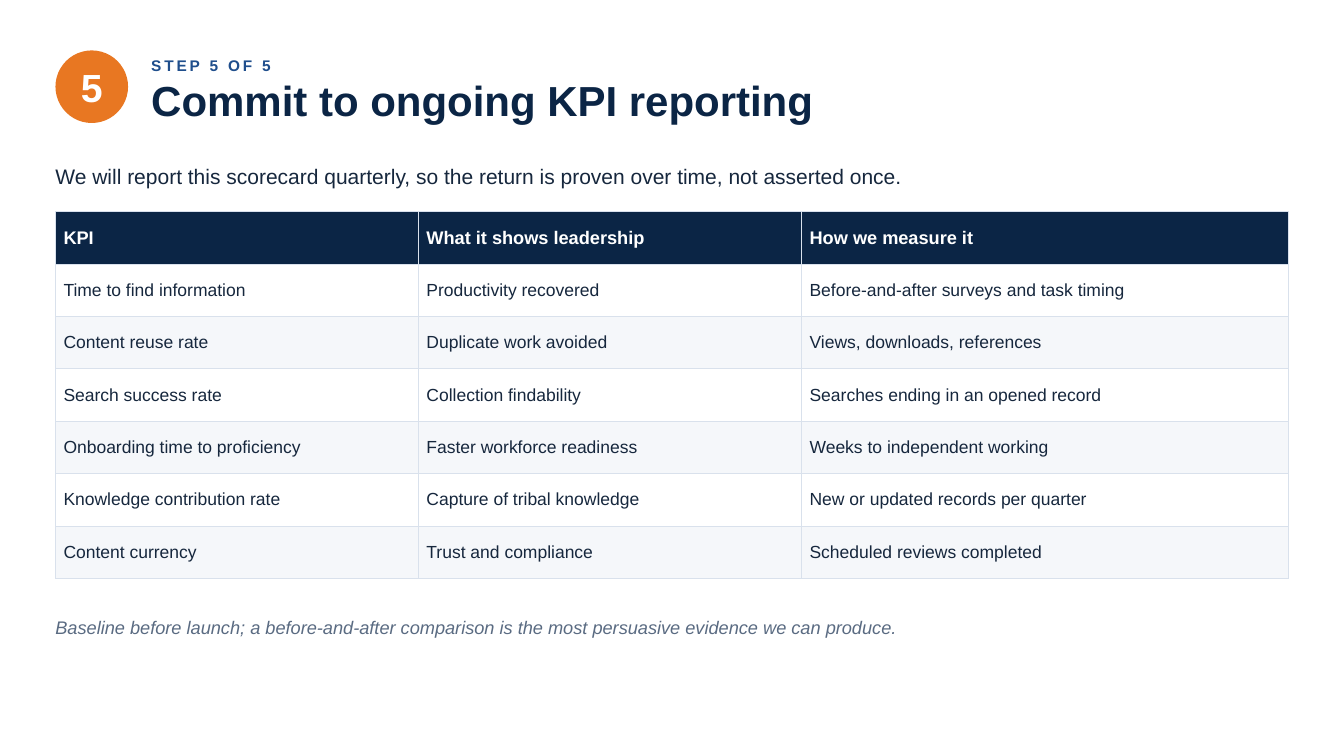
from dataclasses import dataclass

from lxml import etree
from pptx import Presentation
from pptx.dml.color import RGBColor
from pptx.enum.shapes import MSO_SHAPE
from pptx.enum.text import MSO_ANCHOR, PP_ALIGN
from pptx.oxml.ns import qn
from pptx.util import Inches, Pt

OVAL = MSO_SHAPE.OVAL
MIDDLE = MSO_ANCHOR.MIDDLE
CENTER = PP_ALIGN.CENTER


@dataclass(frozen=True)
class Theme:
    font: str = "Arial"
    white: str = "FFFFFF"
    navy: str = "0B2545"
    blue: str = "1F4E8C"
    orange: str = "E87722"
    ink: str = "16273D"
    muted: str = "5A6B82"
    band: str = "F5F7FA"
    rule: str = "D9E1EC"
    badge: float = 28
    step: float = 11
    title: float = 30
    lead: float = 15
    head: float = 13
    body: float = 12.5
    note: float = 13
    border: float = 0.75


THEME = Theme()
LEFT = 0.55
WIDTH = 12.2
ROW = 0.52
PAD = 0.08
COLS = (3.6, 3.8, 4.83)
KPIS = (
    ("KPI", "What it shows leadership", "How we measure it"),
    ("Time to find information", "Productivity recovered",
     "Before-and-after surveys and task timing"),
    ("Content reuse rate", "Duplicate work avoided",
     "Views, downloads, references"),
    ("Search success rate", "Collection findability",
     "Searches ending in an opened record"),
    ("Onboarding time to proficiency", "Faster workforce readiness",
     "Weeks to independent working"),
    ("Knowledge contribution rate", "Capture of tribal knowledge",
     "New or updated records per quarter"),
    ("Content currency", "Trust and compliance",
     "Scheduled reviews completed"),
)


def paint(fill, color):
    fill.solid()
    fill.fore_color.rgb = RGBColor.from_string(color)


def style(para, size, color, bold=False, italic=False, track=0):
    for run in para.runs:
        font = run.font
        font.name = THEME.font
        font.size = Pt(size)
        font.bold = bold
        font.italic = italic
        font.color.rgb = RGBColor.from_string(color)
        if track:
            run._r.get_or_add_rPr().set("spc", str(track))


def set_frame(frame):
    frame.word_wrap = True
    frame.vertical_anchor = MIDDLE
    frame.margin_left = frame.margin_right = Inches(0)
    frame.margin_top = frame.margin_bottom = Inches(0)


def add_badge(slide, text, left, top, size):
    badge = slide.shapes.add_shape(
        OVAL, Inches(left), Inches(top), Inches(size), Inches(size))
    badge.shadow.inherit = False
    paint(badge.fill, THEME.orange)
    badge.line.fill.background()
    set_frame(badge.text_frame)
    para = badge.text_frame.paragraphs[0]
    para.text = text
    para.alignment = CENTER
    style(para, THEME.badge, THEME.white, bold=True)


def add_text(slide, text, left, top, width, height):
    box = slide.shapes.add_textbox(
        Inches(left), Inches(top), Inches(width), Inches(height))
    set_frame(box.text_frame)
    box.text_frame.text = text
    return box.text_frame.paragraphs


def add_border(cell):
    props = cell._tc.get_or_add_tcPr()
    for side in ("lnL", "lnR", "lnT", "lnB"):
        line = etree.SubElement(props, qn(f"a:{side}"))
        line.set("w", str(Pt(THEME.border)))
        fill = etree.SubElement(line, qn("a:solidFill"))
        etree.SubElement(fill, qn("a:srgbClr")).set("val", THEME.rule)


def fill_cell(cell, text, row):
    cell.text = text
    cell.vertical_anchor = MIDDLE
    cell.margin_left = cell.margin_right = Inches(PAD)
    cell.margin_top = cell.margin_bottom = Inches(PAD)
    add_border(cell)
    para = cell.text_frame.paragraphs[0]
    if row == 0:
        paint(cell.fill, THEME.navy)
        style(para, THEME.head, THEME.white, bold=True)
    else:
        paint(cell.fill, THEME.white if row % 2 else THEME.band)
        style(para, THEME.body, THEME.ink)


def add_grid(slide, data, left, top):
    table = slide.shapes.add_table(
        len(data), len(COLS), Inches(left), Inches(top),
        Inches(sum(COLS)), Inches(ROW * len(data))).table
    table.horz_banding = False
    for col, width in zip(table.columns, COLS):
        col.width = Inches(width)
    for r, texts in enumerate(data):
        table.rows[r].height = Inches(ROW)
        for c, text in enumerate(texts):
            fill_cell(table.cell(r, c), text, r)


def main():
    deck = Presentation()
    deck.slide_width = Inches(13.33)
    deck.slide_height = Inches(7.5)
    slide = deck.slides.add_slide(deck.slide_layouts[6])
    paint(slide.background.fill, THEME.white)

    add_badge(slide, "5", LEFT, 0.5, 0.72)
    step, title = add_text(
        slide, "STEP 5 OF 5\nCommit to ongoing KPI reporting",
        1.5, 0.42, 11.2, 0.95)
    style(step, THEME.step, THEME.blue, bold=True, track=200)
    style(title, THEME.title, THEME.navy, bold=True)

    lead, = add_text(
        slide, "We will report this scorecard quarterly, so the return is "
        "proven over time, not asserted once.", LEFT, 1.55, WIDTH, 0.4)
    style(lead, THEME.lead, THEME.ink)

    add_grid(slide, KPIS, LEFT, 2.1)

    note, = add_text(
        slide, "Baseline before launch; a before-and-after comparison is "
        "the most persuasive evidence we can produce.",
        LEFT, 6.05, WIDTH, 0.35)
    style(note, THEME.note, THEME.muted, italic=True)

    deck.save("out.pptx")


if __name__ == "__main__":
    main()
